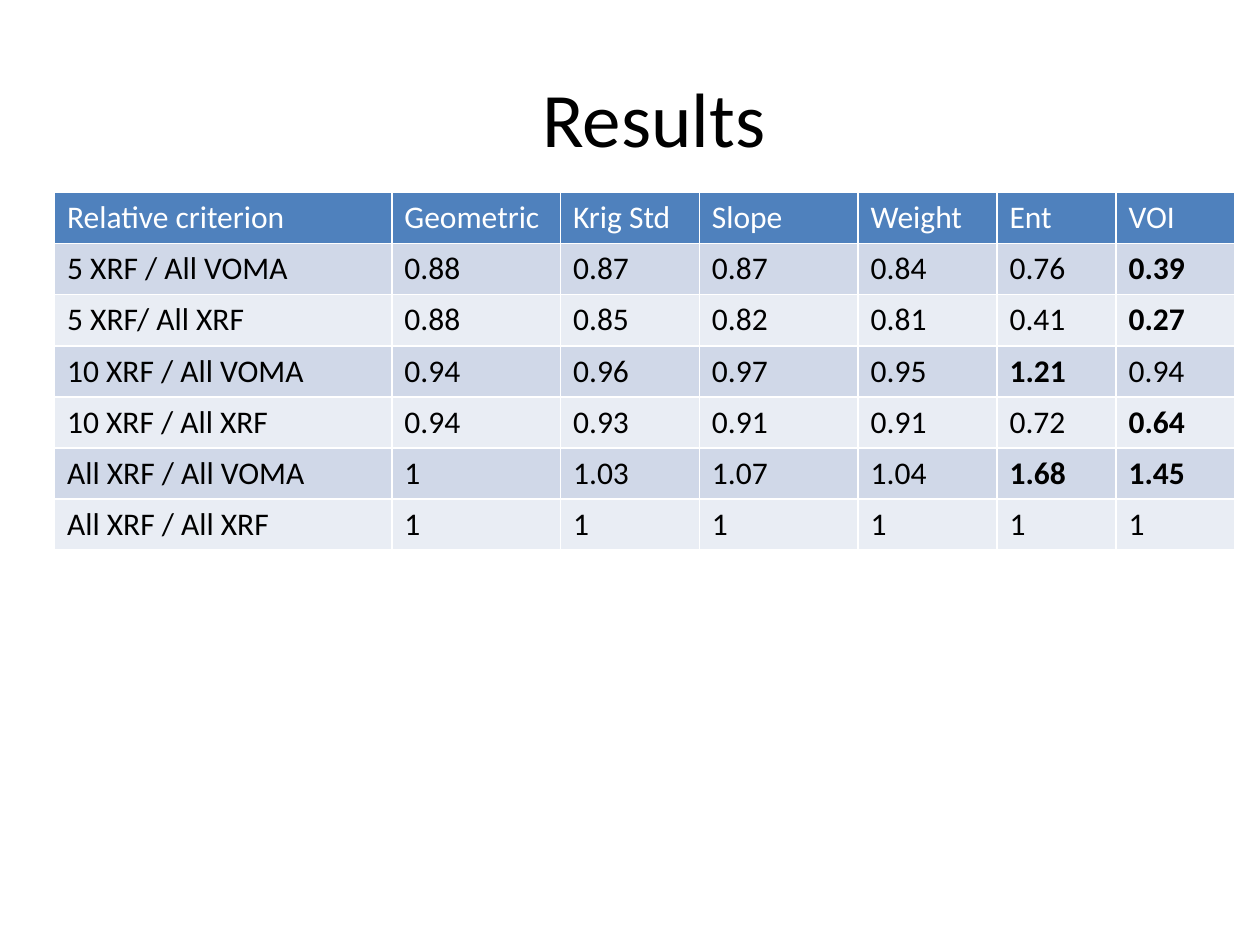
from lxml import etree
from pptx import Presentation
from pptx.dml.color import RGBColor
from pptx.enum import text
from pptx.oxml import ns
from pptx.util import Cm, Pt

BLACK = RGBColor(0x00, 0x00, 0x00)
WHITE = RGBColor(0xFF, 0xFF, 0xFF)
HEADER_BLUE = RGBColor(0x4F, 0x81, 0xBD)
BAND_DARK = RGBColor(0xD0, 0xD8, 0xE8)
BAND_LIGHT = RGBColor(0xE9, 0xED, 0xF4)

COLUMN_WIDTHS = [6.8, 3.4, 2.8, 3.2, 2.8, 2.4, 2.4]
ROW_HEIGHT = 1.03
ROWS = [
    ["Relative criterion", "Geometric", "Krig Std", "Slope", "Weight", "Ent", "VOI"],
    ["5 XRF / All VOMA", "0.88", "0.87", "0.87", "0.84", "0.76", "0.39"],
    ["5 XRF/ All XRF", "0.88", "0.85", "0.82", "0.81", "0.41", "0.27"],
    ["10 XRF / All VOMA", "0.94", "0.96", "0.97", "0.95", "1.21", "0.94"],
    ["10 XRF / All XRF", "0.94", "0.93", "0.91", "0.91", "0.72", "0.64"],
    ["All XRF / All VOMA", "1", "1.03", "1.07", "1.04", "1.68", "1.45"],
    ["All XRF / All XRF", "1", "1", "1", "1", "1", "1"],
]
BOLD_VALUES = {"0.39", "0.27", "1.21", "0.64", "1.68", "1.45"}


def write(frame, words, size=18, color=BLACK, bold=False, align=text.PP_ALIGN.LEFT):
    para = frame.paragraphs[0]
    para.alignment = align
    span = para.add_run()
    span.text = words
    span.font.name = "Calibri"
    span.font.size = Pt(size)
    span.font.bold = bold
    span.font.color.rgb = color


def add_white_borders(cell):
    properties = cell._tc.get_or_add_tcPr()
    for position, tag in enumerate(["a:lnL", "a:lnR", "a:lnT", "a:lnB"]):
        line = etree.Element(ns.qn(tag), w=str(Pt(1)))
        fill = etree.SubElement(line, ns.qn("a:solidFill"))
        etree.SubElement(fill, ns.qn("a:srgbClr"), val=str(WHITE))
        properties.insert(position, line)


deck = Presentation()
deck.slide_width, deck.slide_height = Cm(25.4), Cm(19.05)
page = deck.slides.add_slide(deck.slide_layouts[6])

title = page.shapes.add_textbox(Cm(1.27), Cm(0.76), Cm(23.83), Cm(3.18)).text_frame
title.word_wrap = True
title.vertical_anchor = text.MSO_ANCHOR.MIDDLE
write(title, "Results", size=44, align=text.PP_ALIGN.CENTER)

table = page.shapes.add_table(
    len(ROWS), len(COLUMN_WIDTHS), Cm(1.1), Cm(3.88),
    Cm(sum(COLUMN_WIDTHS)), Cm(ROW_HEIGHT * len(ROWS))).table
for column, width in zip(table.columns, COLUMN_WIDTHS):
    column.width = Cm(width)

for row_index, values in enumerate(ROWS):
    table.rows[row_index].height = Cm(ROW_HEIGHT)
    is_header = row_index == 0
    band = BAND_DARK if row_index % 2 else BAND_LIGHT
    for column_index, value in enumerate(values):
        cell = table.cell(row_index, column_index)
        cell.fill.solid()
        cell.fill.fore_color.rgb = HEADER_BLUE if is_header else band
        add_white_borders(cell)
        write(cell.text_frame, value, color=WHITE if is_header else BLACK,
              bold=value in BOLD_VALUES)

deck.save("out.pptx")
